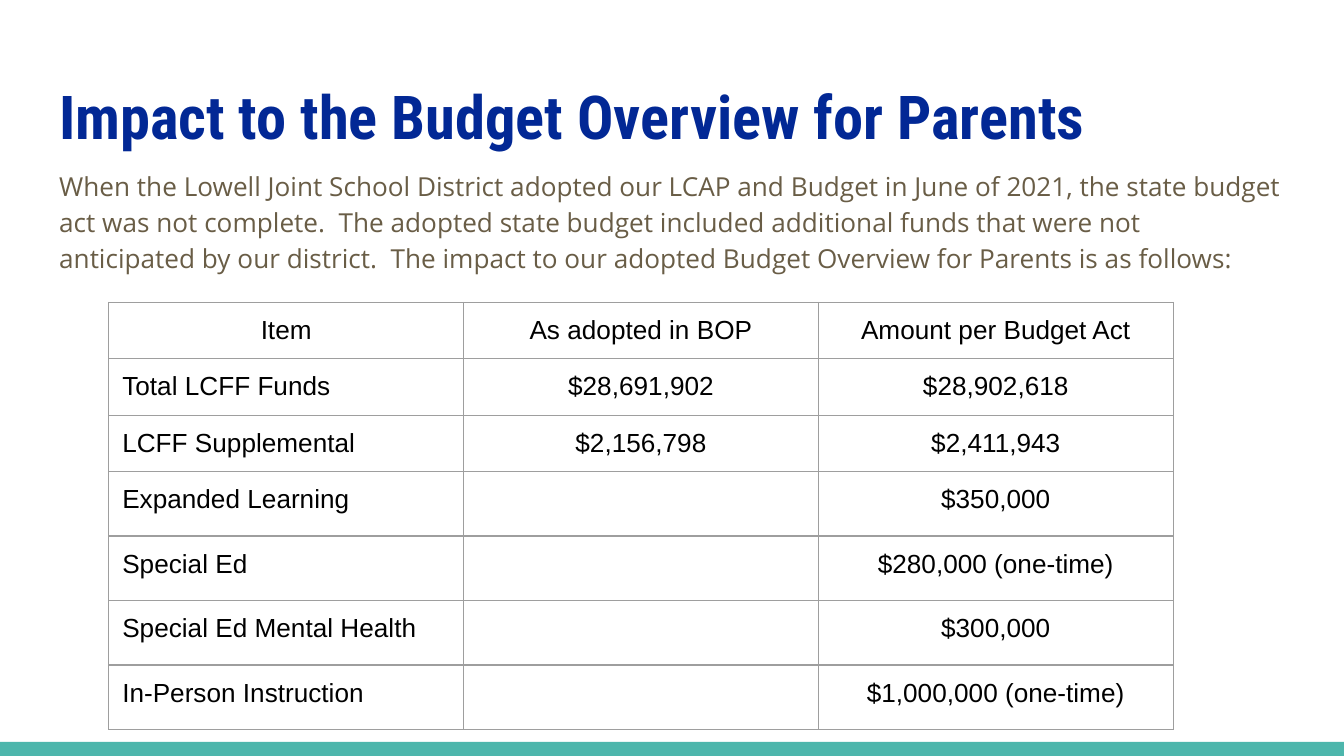
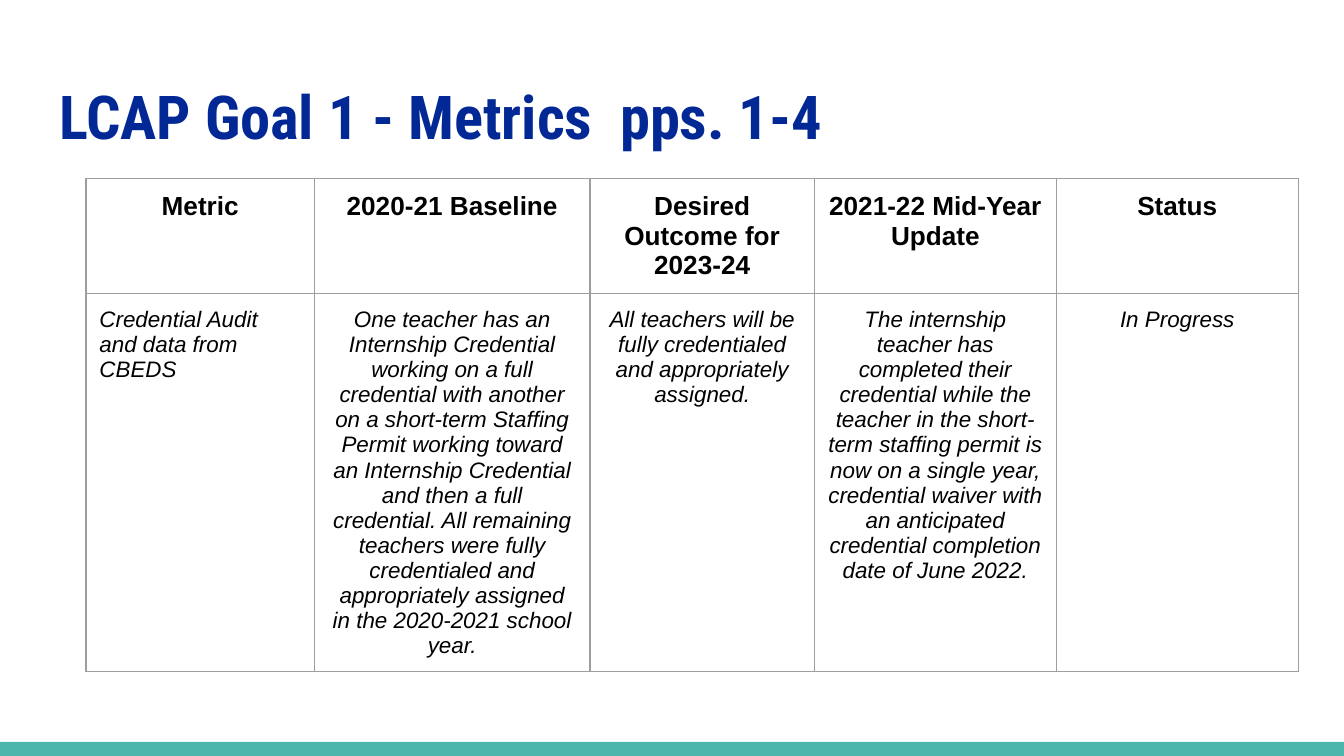
from lxml.etree import SubElement
from pptx import Presentation
from pptx.dml.color import RGBColor
from pptx.enum.shapes import MSO_SHAPE
from pptx.enum.text import MSO_ANCHOR, PP_ALIGN
from pptx.oxml.ns import qn

PX = 9144  # 100 px to the inch
NAVY = RGBColor(0x02, 0x28, 0x95)
BROWN = RGBColor(0x69, 0x5D, 0x46)
TEAL = RGBColor(0x4D, 0xB6, 0xAC)
GREY = RGBColor(0x9E, 0x9E, 0x9E)
BLACK = RGBColor(0, 0, 0)


def write(tf, text, size=14, font="Arial", color=BLACK, bold=False,
          italic=False, align=PP_ALIGN.LEFT, spacing=1.0):
    tf.word_wrap = True
    tf.margin_left = tf.margin_right = tf.margin_top = tf.margin_bottom = 10 * PX
    tf.vertical_anchor = MSO_ANCHOR.TOP
    p = tf.paragraphs[0]
    p.alignment, p.line_spacing = align, spacing
    p.space_before = p.space_after = 0
    r = p.add_run()
    r.text = text
    f = r.font
    f.size, f.name, f.bold, f.italic = int(size * 12700), font, bold, italic
    f.color.rgb = color
    return p


def add_grid(s, left, top, widths, heights, rows, head_bold=False, body=None):
    frame = s.shapes.add_table(len(rows), len(widths), left * PX, top * PX,
                               sum(widths) * PX, sum(heights) * PX)
    table = frame.table
    table.first_row = table.horz_banding = False
    for col, width in zip(table.columns, widths):
        col.width = width * PX
    for row, height in zip(table.rows, heights):
        row.height = height * PX
    for i, row in enumerate(rows):
        for j, text in enumerate(row):
            cell = table.cell(i, j)
            cell.margin_left = cell.margin_right = 10 * PX
            cell.margin_top = cell.margin_bottom = 10 * PX
            tcPr = cell._tc.get_or_add_tcPr()
            for side in ("lnL", "lnR", "lnT", "lnB"):
                ln = SubElement(tcPr, qn("a:" + side), w="9525")
                fill = SubElement(ln, qn("a:solidFill"))
                SubElement(fill, qn("a:srgbClr"), val=str(GREY))
            cell.fill.background()
            p = cell.text_frame.paragraphs[0]
            if not text:
                SubElement(p._p, qn("a:endParaRPr"), sz="1400")
                continue
            p.alignment = PP_ALIGN.LEFT if i and not j else PP_ALIGN.CENTER
            r = p.add_run()
            r.text = text
            f = r.font
            f.name, f.size, f.color.rgb = "Arial", 14 * 12700, BLACK
            f.bold = head_bold and i == 0
            if body and i:
                f.size, f.italic = body * 12700, True


prs = Presentation()
prs.slide_width, prs.slide_height = 1000 * PX, 5143500

# Slides with their titles
slides = []
for layout, height, title in (
        (1, 65, "Impact to the Budget Overview for Parents"),
        (5, 77, "LCAP Goal 1 - Metrics  pps. 1-4")):
    s = prs.slides.add_slide(prs.slide_layouts[layout])
    sp = s.shapes.title
    sp.left, sp.top, sp.width, sp.height = 34 * PX, 49 * PX, 932 * PX, height * PX
    write(sp.text_frame, title, size=32.4, font="Roboto Condensed", color=NAVY, bold=True)
    slides.append(s)
budget, metrics = slides

# Bottom band, shared through the master
band = budget.shapes.add_shape(MSO_SHAPE.RECTANGLE, 0, 552 * PX, 1000 * PX, 11 * PX)
band.shadow.inherit = False
band.fill.solid()
band.fill.fore_color.rgb = TEAL
band.line.fill.background()
prs.slide_master.shapes.element.insert(2, band.element)

# Budget slide: introduction and amounts
sp = budget.placeholders[1]
sp.left, sp.top, sp.width, sp.height = 34 * PX, 113 * PX, 932 * PX, 184 * PX
p = write(sp.text_frame,
          "When the Lowell Joint School District adopted our LCAP and Budget in June of 2021, "
          "the state budget act was not complete.  The adopted state budget included additional "
          "funds that were not anticipated by our district.  The impact to our adopted Budget "
          "Overview for Parents is as follows:",
          font="Open Sans", color=BROWN, spacing=1.15)
pPr = p._p.get_or_add_pPr()
pPr.set("marL", "0")
pPr.set("indent", "0")
SubElement(pPr, qn("a:buNone"))

add_grid(budget, 81, 225, [264] * 3, [42] * 3 + [48] * 4, [
    ("Item", "As adopted in BOP", "Amount per Budget Act"),
    ("Total LCFF Funds", "$28,691,902", "$28,902,618"),
    ("LCFF Supplemental", "$2,156,798", "$2,411,943"),
    ("Expanded Learning", "", "$350,000"),
    ("Special Ed", "", "$280,000 (one-time)"),
    ("Special Ed Mental Health", "", "$300,000"),
    ("In-Person Instruction", "", "$1,000,000 (one-time)"),
])

# Metrics slide: progress on the goal
add_grid(metrics, 64, 133, [170, 205, 167, 180, 180], [85, 281], [
    ("Metric", "2020-21 Baseline", "Desired Outcome for 2023-24",
     "2021-22 Mid-Year Update", "Status"),
    ("Credential Audit and data from CBEDS",
     "One teacher has an Internship Credential working on a full credential with another on a "
     "short-term Staffing Permit working toward an Internship Credential and then a full "
     "credential. All remaining teachers were fully credentialed and appropriately assigned "
     "in the 2020-2021 school year.",
     "All teachers will be fully credentialed and appropriately assigned.",
     "The internship teacher has completed their credential while the teacher in the short-term "
     "staffing permit is now on a single year, credential waiver with an anticipated credential "
     "completion date of June 2022.",
     "In Progress"),
], head_bold=True, body=12)

prs.save("out.pptx")
